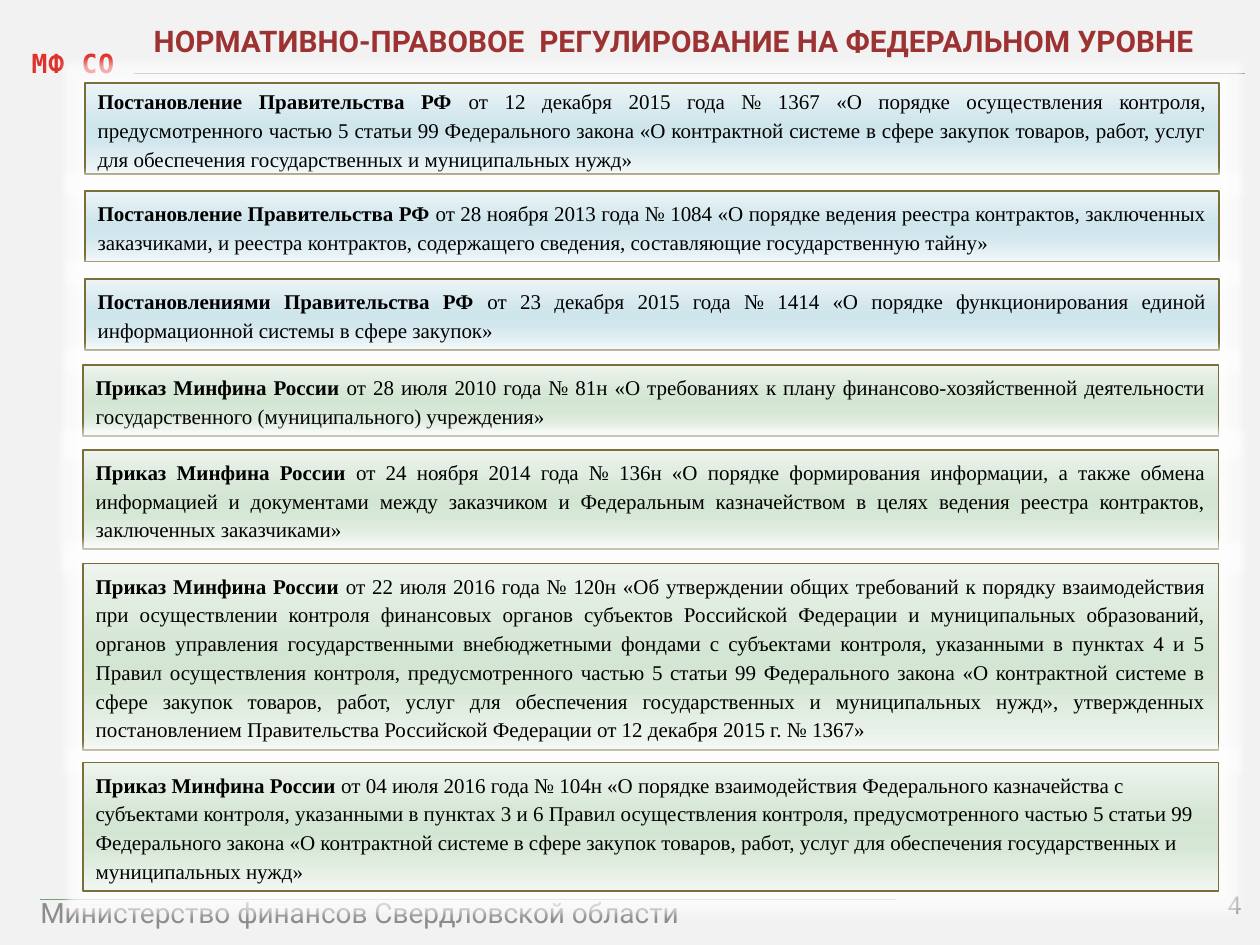
import pptx
import pptx.dml.color
import pptx.enum.shapes
import pptx.enum.text
import pptx.oxml
import pptx.oxml.ns
import pptx.util

Pt = pptx.util.Pt
ALIGN = pptx.enum.text.PP_ALIGN
ANCHOR = pptx.enum.text.MSO_ANCHOR
RECTANGLE = pptx.enum.shapes.MSO_SHAPE.RECTANGLE
NAMESPACE = pptx.oxml.ns.nsdecls("a")

GREY = "8C8C8C"
BLUE_STOPS = [(0, "ECF4F7"), (40, "D2E7ED"), (50, "CEE5EC"), (65, "D2E7ED"), (100, "F0F6F9")]
GREEN_STOPS = [(0, "EEF4EE"), (40, "D6E7D6"), (50, "D3E5D3"), (65, "D6E7D6"), (100, "F1F6F1")]

DECREE = "Постановление Правительства РФ "
ORDER = "Приказ Минфина России "

# left, width, gradient, then the cards: top, height, issuer, subject
CARD_GROUPS = [
    (48.7, 648, BLUE_STOPS, [
        (47.5, 51.8, DECREE,
         "от 12 декабря 2015 года № 1367 «О порядке осуществления контроля, предусмотренного "
         "частью 5 статьи 99 Федерального закона «О контрактной системе в сфере закупок товаров, "
         "работ, услуг для обеспечения государственных и муниципальных нужд»"),
        (109, 40.5, DECREE,
         "от 28 ноября 2013 года № 1084 «О порядке ведения реестра контрактов, заключенных "
         "заказчиками, и реестра контрактов, содержащего сведения, составляющие "
         "государственную тайну»"),
        (159.5, 40.5, "Постановлениями Правительства РФ ",
         "от 23 декабря 2015 года № 1414 «О порядке функционирования единой информационной "
         "системы в сфере закупок»"),
    ]),
    (47.6, 648.7, GREEN_STOPS, [
        (208.7, 40.5, ORDER,
         "от 28 июля 2010 года № 81н «О требованиях к плану финансово-хозяйственной "
         "деятельности государственного (муниципального) учреждения»"),
        (257, 56.8, ORDER,
         "от 24 ноября 2014 года № 136н «О порядке формирования информации, а также обмена "
         "информацией и документами между заказчиком и Федеральным казначейством в целях "
         "ведения реестра контрактов, заключенных заказчиками»"),
        (322, 106.7, ORDER,
         "от 22 июля 2016 года № 120н «Об утверждении общих требований к порядку взаимодействия "
         "при осуществлении контроля финансовых органов субъектов Российской Федерации и "
         "муниципальных образований, органов управления государственными внебюджетными фондами "
         "с субъектами контроля, указанными в пунктах 4 и 5 Правил осуществления контроля, "
         "предусмотренного частью 5 статьи 99 Федерального закона «О контрактной системе в "
         "сфере закупок товаров, работ, услуг для обеспечения государственных и муниципальных "
         "нужд», утвержденных постановлением Правительства Российской Федерации от 12 декабря "
         "2015 г. № 1367»"),
        (435.7, 73.3, ORDER,
         "от 04 июля 2016 года № 104н «О порядке взаимодействия Федерального казначейства с "
         "субъектами контроля, указанными в пунктах 3 и 6 Правил осуществления контроля, "
         "предусмотренного частью 5 статьи 99 Федерального закона «О контрактной системе в "
         "сфере закупок товаров, работ, услуг для обеспечения государственных и муниципальных "
         "нужд»"),
    ]),
]


def color(value):
    return pptx.dml.color.RGBColor.from_string(value)


def set_font(font, name, size, value, bold=None):
    font.name = name
    font.size = Pt(size)
    font.bold = bold
    font.color.rgb = color(value)


def add_backdrop(slide):
    backdrop = slide.shapes.add_shape(RECTANGLE, Pt(-4), Pt(-8), Pt(724), Pt(548))
    backdrop.shadow.inherit = False
    backdrop.fill.solid()
    backdrop.fill.fore_color.rgb = color("F2F2F2")
    backdrop.line.fill.background()


def add_label(slide, box, text, font, align=ALIGN.LEFT, anchor=ANCHOR.TOP):
    """Add a one-line text; box is left, top, width, height in points."""
    frame = slide.shapes.add_textbox(*map(Pt, box)).text_frame
    frame.word_wrap = True
    frame.vertical_anchor = anchor
    line = frame.paragraphs[0]
    line.text = text
    line.alignment = align
    set_font(line.font, *font)
    return line


def add_rule(slide, left, right, y):
    rule = slide.shapes.add_connector(
        pptx.enum.shapes.MSO_CONNECTOR.STRAIGHT, Pt(left), Pt(y), Pt(right), Pt(y))
    rule.line.color.rgb = color("72A376")
    rule.line.width = Pt(0.94)
    properties = rule._element.spPr
    properties.append(pptx.oxml.parse_xml(f"<a:effectLst {NAMESPACE}/>"))


def fill_vertical_gradient(shape, stops):
    stop_xml = "".join(
        f'<a:gs pos="{position * 1000}"><a:srgbClr val="{value}"/></a:gs>'
        for position, value in stops)
    gradient = pptx.oxml.parse_xml(
        f'<a:gradFill {NAMESPACE} rotWithShape="1"><a:gsLst>{stop_xml}</a:gsLst>'
        '<a:lin ang="5400000" scaled="0"/></a:gradFill>')
    shape._element.spPr.find(pptx.oxml.ns.qn("a:prstGeom")).addnext(gradient)


def add_white_glow(shape, radius):
    effects = shape._element.spPr.find(pptx.oxml.ns.qn("a:effectLst"))
    effects.append(pptx.oxml.parse_xml(
        f'<a:glow {NAMESPACE} rad="{Pt(radius)}"><a:srgbClr val="FFFFFF">'
        '<a:alpha val="60000"/></a:srgbClr></a:glow>'))


def add_card(slide, box, stops, issuer, subject, align, anchor):
    card = slide.shapes.add_shape(RECTANGLE, *map(Pt, box))
    card.shadow.inherit = False
    fill_vertical_gradient(card, stops)
    card.line.color.rgb = color("796F39")
    card.line.width = Pt(0.94)
    add_white_glow(card, 8)
    frame = card.text_frame
    frame.word_wrap = True
    frame.vertical_anchor = anchor
    act = frame.paragraphs[0]
    act.alignment = align
    act.line_spacing = 1.14
    set_font(act.font, "Times New Roman", 12, "000000")
    for text, bold in ((issuer, True), (subject, False)):
        run = act.add_run()
        run.text = text
        run.font.bold = bold


def main():
    deck = pptx.Presentation()
    deck.slide_width, deck.slide_height = Pt(720), Pt(540)
    slide = deck.slides.add_slide(deck.slide_layouts[6])

    add_backdrop(slide)
    initials = add_label(slide, (-4.3, 21, 92, 28), "МФ СО",
                         ("DejaVu Sans Mono", 15, "E0322D", True), ALIGN.CENTER)
    initials.line_spacing = 1.15
    initials.runs[0].font._element.set("spc", "50")
    add_rule(slide, 76.5, 711.5, 42)
    add_label(slide, (16, 508.3, 517, 27), "Министерство финансов Свердловской области",
              ("Roboto", 16, GREY))
    add_rule(slide, 23, 512, 514)
    add_label(slide, (672.5, 500.4, 44, 28.8), "4", ("Roboto", 14, GREY),
              ALIGN.RIGHT, ANCHOR.BOTTOM)
    add_label(slide, (74, 9.5, 622, 28),
              "НОРМАТИВНО-ПРАВОВОЕ  РЕГУЛИРОВАНИЕ НА ФЕДЕРАЛЬНОМ УРОВНЕ",
              ("Roboto", 17, "9D3232", True), ALIGN.CENTER)

    first_card, last_card = CARD_GROUPS[0][3][0], CARD_GROUPS[-1][3][-1]
    for left, width, stops, cards in CARD_GROUPS:
        for card in cards:
            top, height, issuer, subject = card
            align = ALIGN.LEFT if card is last_card else ALIGN.JUSTIFY
            anchor = ANCHOR.MIDDLE if card is first_card else ANCHOR.TOP
            add_card(slide, (left, top, width, height), stops, issuer, subject, align, anchor)

    deck.save("out.pptx")


if __name__ == "__main__":
    main()
